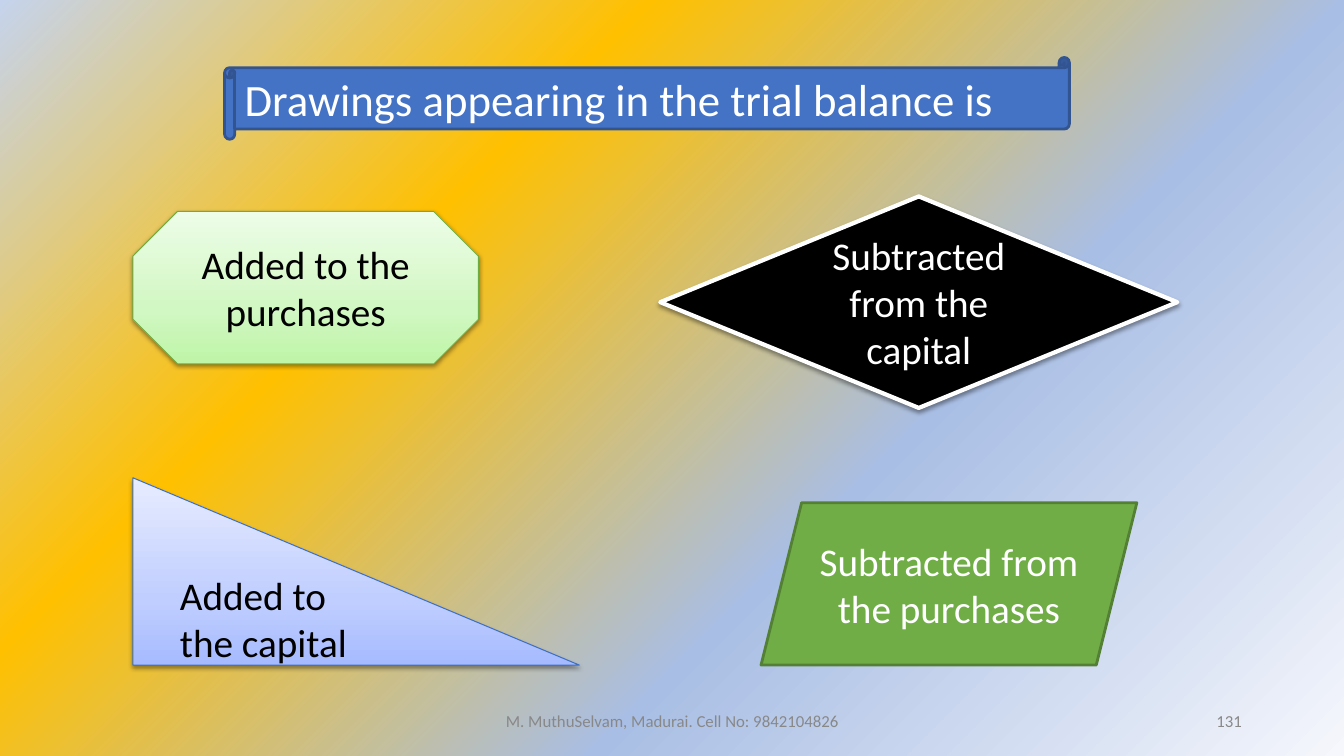
import lxml.etree
import pptx
import pptx.dml.color
import pptx.enum.shapes
import pptx.enum.text
import pptx.oxml.ns
import pptx.util

Cm = pptx.util.Cm
Pt = pptx.util.Pt
SHAPE = pptx.enum.shapes.MSO_SHAPE
ALIGN = pptx.enum.text.PP_ALIGN
MIDDLE = pptx.enum.text.MSO_ANCHOR.MIDDLE
NAMESPACE = pptx.oxml.ns.nsdecls("a")
color = pptx.dml.color.RGBColor.from_string

LINEAR_UP = '<a:lin ang="16200000" scaled="0"/>'
FROM_CORNER = ('<a:path path="circle"><a:fillToRect l="100000" t="100000"/></a:path>'
               '<a:tileRect r="-100000" b="-100000"/>')
SOFT_SHADOW = (f'<a:outerShdw {NAMESPACE} blurRad="40000" dist="20000" dir="5400000" '
               'rotWithShape="0"><a:srgbClr val="000000"><a:alpha val="38000"/>'
               '</a:srgbClr></a:outerShdw>')


def set_gradient(solid_fill, stops, direction):
    """Put a gradient of (percent, colour) stops in the place of a solid fill element."""
    stop_xml = "".join(f'<a:gs pos="{percent * 1000}"><a:srgbClr val="{value}"/></a:gs>'
                       for percent, value in stops)
    gradient = lxml.etree.fromstring(
        f'<a:gradFill {NAMESPACE} rotWithShape="1"><a:gsLst>{stop_xml}</a:gsLst>'
        f'{direction}</a:gradFill>')
    solid_fill.getparent().replace(solid_fill, gradient)


def write_text(box, text, size, font_color, alignment):
    frame = box.text_frame
    frame.word_wrap = True
    frame.vertical_anchor = MIDDLE
    para = frame.paragraphs[0]
    para.text = text
    para.alignment = alignment
    para.font.name = "Calibri"
    para.font.size = Pt(size)
    para.font.color.rgb = color(font_color)


deck = pptx.Presentation()
deck.slide_width = Cm(33.87)
deck.slide_height = Cm(19.05)
slide = deck.slides.add_slide(deck.slide_layouts[6])

slide.background.fill.solid()
set_gradient(slide.element.xpath(".//p:bgPr/a:solidFill")[0],
             [(0, "F5F7FC"), (36, "A9BEE4"), (69, "FFC000"), (100, "C5D3ED")],
             FROM_CORNER)

# Question scroll and the four answers: kind, place, fill, line, shadow, text
green_stops = [(0, "BEF5A7"), (35, "D1F7C2"), (100, "EDFDE7")]
blue_stops = [(0, "A6BBFF"), (35, "C0CEFF"), (100, "E7ECFF")]
cards = [
    (SHAPE.HORIZONTAL_SCROLL, (5.66, 1.45, 21.29, 2.06), "4472C4", "325491", 2, False,
     "Drawings appearing in the trial balance is", 32, "FFFFFF", ALIGN.LEFT),
    (SHAPE.OCTAGON, (3.35, 5.33, 8.71, 3.84), green_stops, "6DAC43", 0.75, True,
     "Added to the purchases", 28, "000000", ALIGN.CENTER),
    (SHAPE.DIAMOND, (16.64, 4.95, 13.03, 5.33), "000000", "FFFFFF", 3, True,
     "Subtracted from the capital", 28, "FFFFFF", ALIGN.CENTER),
    (SHAPE.RIGHT_TRIANGLE, (3.35, 12.04, 11.25, 4.72), blue_stops, "3F6FC3", 0.75, True,
     "Added to the capital", 28, "000000", ALIGN.LEFT),
    (SHAPE.PARALLELOGRAM, (19.18, 12.67, 9.47, 4.09), "70AD47", "538035", 2, False,
     "Subtracted from the purchases", 28, "FFFFFF", ALIGN.CENTER),
]
for (kind, place, fill, line_color, line_width, has_shadow,
     text, size, font_color, alignment) in cards:
    card = slide.shapes.add_shape(kind, *map(Cm, place))
    card.fill.solid()
    if isinstance(fill, str):
        card.fill.fore_color.rgb = color(fill)
    else:
        set_gradient(card.element.spPr.find(pptx.oxml.ns.qn("a:solidFill")), fill, LINEAR_UP)
    card.line.color.rgb = color(line_color)
    card.line.width = Pt(line_width)
    card.shadow.inherit = False
    if has_shadow:
        effects = card.element.spPr.find(pptx.oxml.ns.qn("a:effectLst"))
        effects.append(lxml.etree.fromstring(SOFT_SHADOW))
    write_text(card, text, size, font_color, alignment)

# Footer and slide number
for left, width, text, alignment in [
    (11.23, 11.43, "M. MuthuSelvam, Madurai. Cell No: 9842104826", ALIGN.CENTER),
    (23.93, 7.62, "131", ALIGN.RIGHT),
]:
    box = slide.shapes.add_textbox(Cm(left), Cm(17.65), Cm(width), Cm(1.02))
    write_text(box, text, 12, "888888", alignment)

deck.save("out.pptx")
